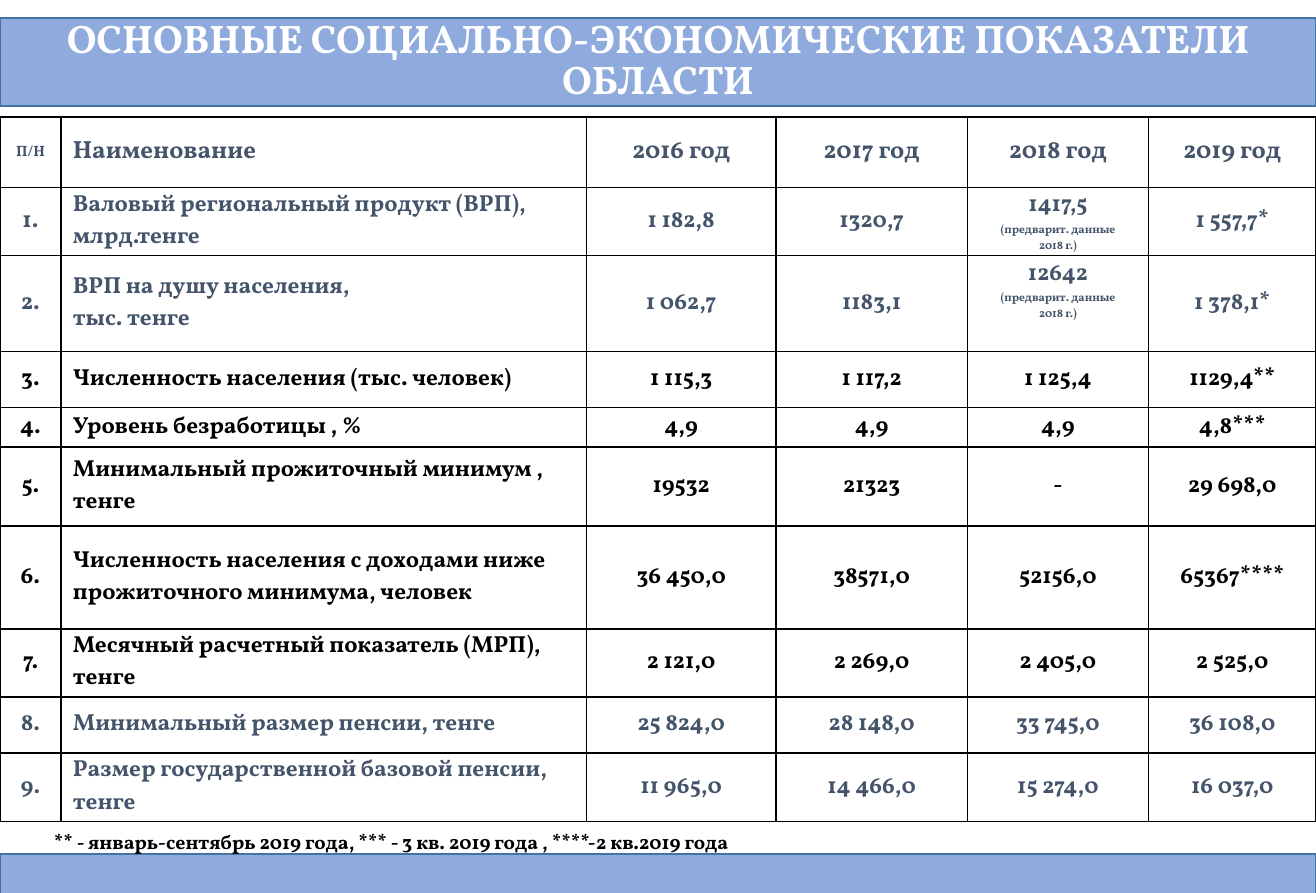
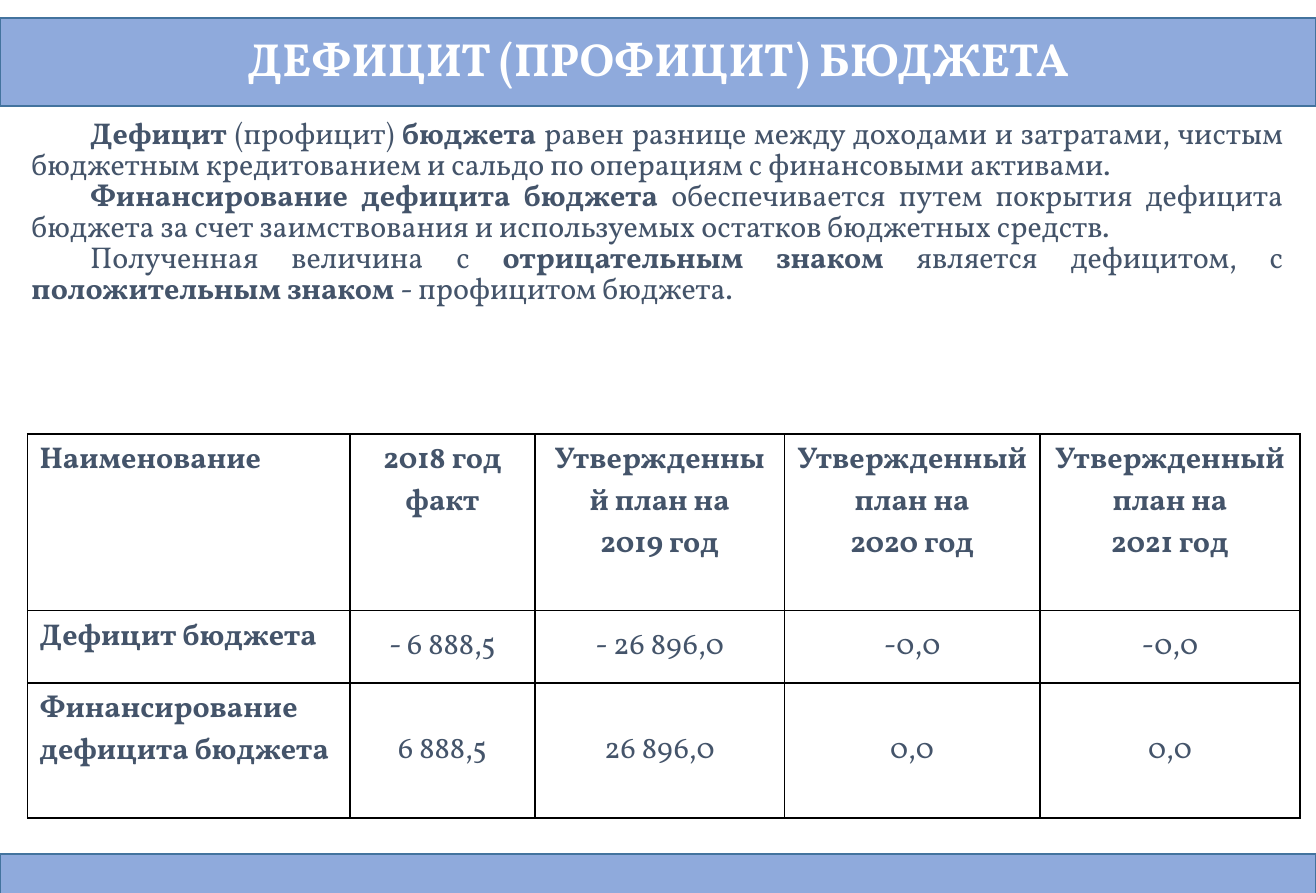
import pptx
import pptx.util
import pptx.dml.color
import pptx.enum.shapes
import pptx.enum.text
import pptx.oxml

FONT = "Vollkorn"
BAND, BAND_LINE = "8FAADC", "43739E"
SLATE, BLACK, WHITE = "44546A", "000000", "FFFFFF"
ALIGN = pptx.enum.text.PP_ALIGN
ANCHOR = pptx.enum.text.MSO_ANCHOR
PROCESS = pptx.enum.shapes.MSO_SHAPE.FLOWCHART_PROCESS

prs = pptx.Presentation()
prs.slide_width = pptx.util.Inches(11.02)
prs.slide_height = pptx.util.Inches(7.48)
W, H = prs.slide_width, prs.slide_height


def color(value):
    return pptx.dml.color.RGBColor.from_string(value)


def add_run(p, text, size, ink, bold=True):
    r = p.add_run()
    r.text = text
    r.font.name, r.font.size, r.font.bold = FONT, pptx.util.Pt(size), bold
    r.font.color.rgb = color(ink)


# Content
NOTE = "\n(предварит. данные\n2018 г.)"
indicators = [
    ["П/Н", "Наименование", "2016 год", "2017 год", "2018 год", "2019 год"],
    ["1.", "Валовый региональный продукт (ВРП), млрд.тенге",
     "1 182,8", "1320,7", "1417,5" + NOTE, "1 557,7*"],
    ["2.", "ВРП на душу населения,\nтыс. тенге",
     "1 062,7", "1183,1", "12642" + NOTE, "1 378,1*"],
    ["3.", "Численность населения (тыс. человек)",
     "1 115,3", "1 117,2", "1 125,4", "1129,4**"],
    ["4.", "Уровень безработицы , %", "4,9", "4,9", "4,9", "4,8***"],
    ["5.", "Минимальный прожиточный минимум , тенге",
     "19532", "21323", "-", "29 698,0"],
    ["6.", "Численность населения с доходами ниже прожиточного минимума, человек",
     "36 450,0", "38571,0", "52156,0", "65367****"],
    ["7.", "Месячный расчетный показатель (МРП), тенге",
     "2 121,0", "2 269,0", "2 405,0", "2 525,0"],
    ["8.", "Минимальный размер пенсии, тенге",
     "25 824,0", "28 148,0", "33 745,0", "36 108,0"],
    ["9.", "Размер государственной базовой пенсии, тенге",
     "11 965,0", "14 466,0", "15 274,0", "16 037,0"],
]
PLAN = "Утвержденный план на\n"
budget = [
    ["Наименование", "2018 год\nфакт"] + [f"{PLAN}{year} год" for year in (2019, 2020, 2021)],
    ["Дефицит бюджета", "- 6 888,5", "- 26 896,0", "-0,0", "-0,0"],
    ["Финансирование дефицита бюджета", "6 888,5", "26 896,0", "0,0", "0,0"],
]
# Each paragraph is a list of (text, bold)
definitions = [
    [("Дефицит", True), (" (профицит) ", False), ("бюджета", True),
     (" равен разнице между доходами и затратами, чистым бюджетным кредитованием "
      "и сальдо по операциям с финансовыми активами.", False)],
    [("Финансирование дефицита бюджета ", True),
     ("обеспечивается путем покрытия дефицита бюджета за счет заимствования "
      "и используемых остатков бюджетных средств.", False)],
    [("Полученная величина с ", False), ("отрицательным знаком", True),
     (" является дефицитом, с ", False), ("положительным знаком ", True),
     ("- профицитом бюджета.", False)],
]
footnote = [[("** - январь-сентябрь 2019 года, *** - 3 кв. 2019 года , ****-2 кв.2019 года", True)]]

# Boxes are shares of the slide; column and row sizes are shares of the table
pages = [
    dict(title="ОСНОВНЫЕ СОЦИАЛЬНО-ЭКОНОМИЧЕСКИЕ ПОКАЗАТЕЛИ ОБЛАСТИ", title_size=24,
         rows=indicators, table_box=(0, 0.131, 1, 0.789), name_col=1, cell_size=14,
         cols=(51, 440, 159, 160, 152, 140), heights=(59, 57, 80, 47, 33, 66, 86, 57, 47, 57),
         pad=0, black_rows=range(3, 8),
         text=footnote, text_box=(0.032, 0.922, 0.902, 0.04), text_size=12,
         ink=BLACK, align=ALIGN.LEFT, indent=0, spacing=1),
    dict(title="ДЕФИЦИТ (ПРОФИЦИТ) БЮДЖЕТА", title_size=28,
         rows=budget, table_box=(0.021, 0.486, 0.967, 0.43), name_col=0, cell_size=18.1,
         cols=(270, 155, 209, 214, 218), heights=(148, 61, 113),
         pad=0.05, black_rows=(),
         text=definitions, text_box=(0.015, 0.127, 0.969, 0.35), text_size=18.1,
         ink=SLATE, align=ALIGN.JUSTIFY, indent=0.49, spacing=0.86),
]

for page in pages:
    s = prs.slides.add_slide(prs.slide_layouts[6])

    # Title band and footer band
    for top, height, title in ((0.02, 0.099, page["title"]), (0.956, 0.045, "")):
        sp = s.shapes.add_shape(PROCESS, 0, int(H * top), W, int(H * height))
        sp.shadow.inherit = False
        sp.fill.solid()
        sp.fill.fore_color.rgb = color(BAND)
        sp.line.color.rgb = color(BAND_LINE)
        sp.line.width = pptx.util.Pt(1)
        if title:
            tf = sp.text_frame
            tf.word_wrap = True
            tf.vertical_anchor = ANCHOR.MIDDLE
            p = tf.paragraphs[0]
            p.alignment = ALIGN.CENTER
            p.line_spacing = 0.85
            add_run(p, title, page["title_size"], WHITE)

    # Table grid
    x, y, w, h = page["table_box"]
    rows, cols, heights = page["rows"], page["cols"], page["heights"]
    table = s.shapes.add_table(len(rows), len(cols), int(W * x), int(H * y),
                               int(W * w), int(H * h)).table
    table.first_row = table.horz_banding = False
    for column, share in zip(table.columns, cols):
        column.width = int(W * w * share / sum(cols))
    for row, share in zip(table.rows, heights):
        row.height = int(H * h * share / sum(heights))

    # Table cells
    is_budget = rows is budget
    for i, row in enumerate(rows):
        for j, text in enumerate(row):
            cell = table.cell(i, j)
            cell.margin_top = cell.margin_bottom = pptx.util.Inches(page["pad"])
            is_name = j == page["name_col"]
            top_aligned = is_budget and (i == 0 or is_name) or text.endswith(NOTE)
            cell.vertical_anchor = ANCHOR.TOP if top_aligned else ANCHOR.MIDDLE
            if text.endswith(NOTE):
                cell.margin_top = pptx.util.Inches(0.02)
            size = page["cell_size"]
            if not is_budget and i == 0:
                size = 9 if j == 0 else 15
            ink = BLACK if i in page["black_rows"] else SLATE
            bold = not is_budget or i == 0 or is_name
            for n, line in enumerate(text.split("\n")):
                tf = cell.text_frame
                p = tf.add_paragraph() if n else tf.paragraphs[0]
                p.alignment = ALIGN.LEFT if is_name else ALIGN.CENTER
                add_run(p, line, 7 if n and text.endswith(NOTE) else size, ink, bold)
            # Borders precede the fill in the cell properties
            tcPr = cell._tc.get_or_add_tcPr()
            for side in ("lnL", "lnR", "lnT", "lnB"):
                tcPr.append(pptx.oxml.parse_xml(
                    f'<a:{side} xmlns:a="http://schemas.openxmlformats.org/drawingml/2006/main" '
                    f'w="12700"><a:solidFill><a:srgbClr val="{BLACK}"/></a:solidFill></a:{side}>'))
            cell.fill.background()

    # Running text
    x, y, w, h = page["text_box"]
    tf = s.shapes.add_textbox(int(W * x), int(H * y), int(W * w), int(H * h)).text_frame
    tf.word_wrap = True
    for n, runs in enumerate(page["text"]):
        p = tf.add_paragraph() if n else tf.paragraphs[0]
        p.alignment = page["align"]
        p.line_spacing = page["spacing"]
        if page["indent"]:
            p._p.get_or_add_pPr().set("indent", str(pptx.util.Inches(page["indent"])))
        for text, bold in runs:
            add_run(p, text, page["text_size"], page["ink"], bold)

prs.save("out.pptx")
